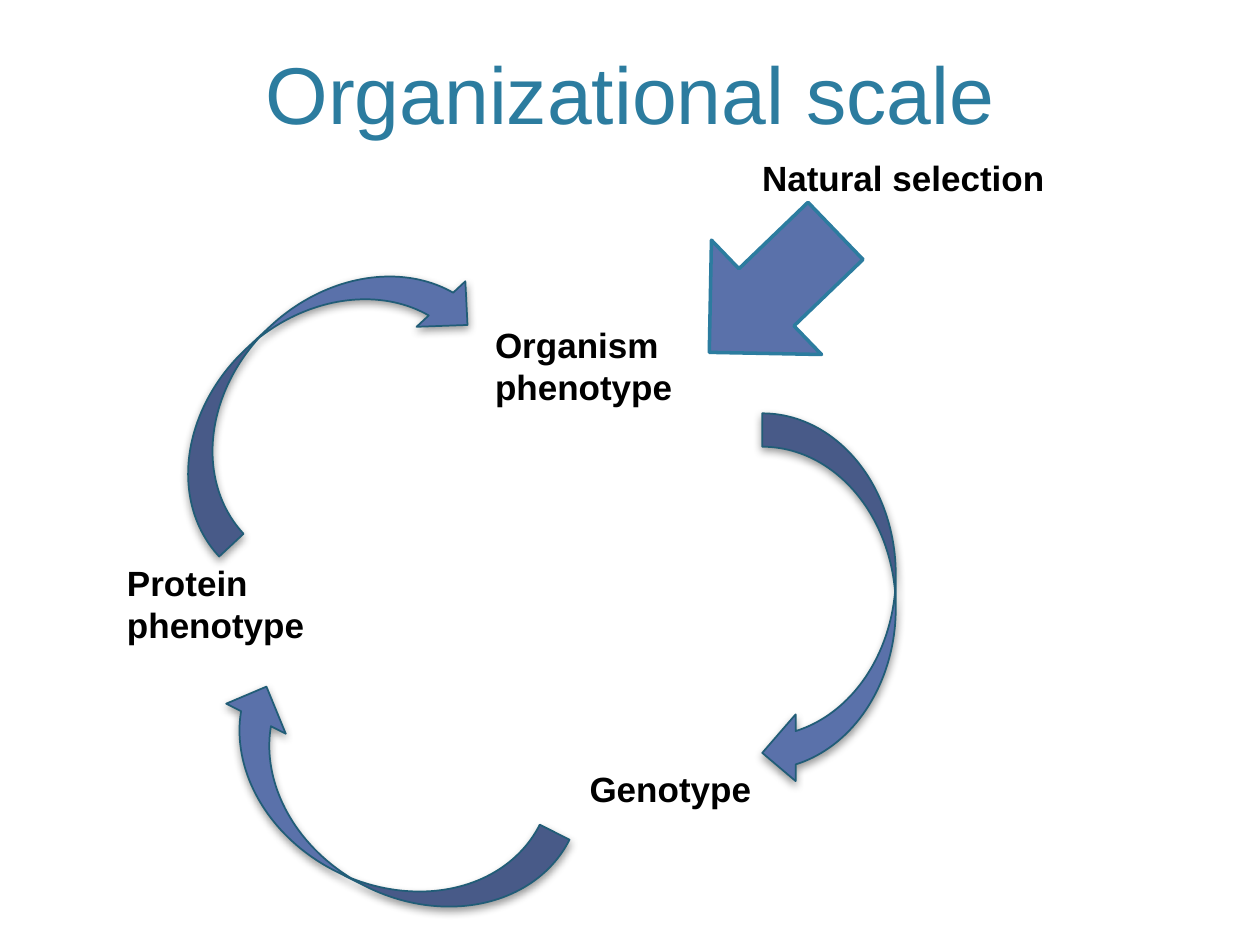
from lxml import etree
from pptx import Presentation
from pptx.dml.color import RGBColor
from pptx.enum.shapes import MSO_SHAPE as Preset
from pptx.enum.text import MSO_ANCHOR as Anchor, MSO_AUTO_SIZE as AutoSize, PP_ALIGN as Align
from pptx.oxml.ns import qn
from pptx.util import Pt


def color(hex_code):
    return RGBColor.from_string(hex_code)


class CycleSlide:
    FONT = "Arial"
    INK, ACCENT, ARROW, OUTLINE = "000000", "2C7C9F", "5A71AA", "215D77"

    def __init__(self, deck):
        self.slide = deck.slides.add_slide(deck.slide_layouts[6])

    def text(self, words, box, size, hex_code, bold=False):
        frame = self.slide.shapes.add_textbox(*map(Pt, box)).text_frame
        frame.word_wrap = True
        run = frame.paragraphs[0].add_run()
        run.text = words
        run.font.name, run.font.size, run.font.bold = self.FONT, Pt(size), bold
        run.font.color.rgb = color(hex_code)
        return frame

    def title(self, words, box):
        frame = self.text(words, box, 46, self.ACCENT)
        frame.vertical_anchor = Anchor.MIDDLE
        frame.paragraphs[0].alignment = Align.CENTER

    def label(self, words, box):
        self.text(words, box, 20, self.INK, bold=True).auto_size = AutoSize.SHAPE_TO_FIT_TEXT

    def arrow(self, preset, box, rotation, line_color, line_width):
        arrow = self.slide.shapes.add_shape(preset, *map(Pt, box))
        arrow.rotation = rotation
        arrow.fill.solid()
        arrow.fill.fore_color.rgb = color(self.ARROW)
        arrow.line.color.rgb = color(line_color)
        arrow.line.width = Pt(line_width)
        arrow.shadow.inherit = False
        return arrow

    def selection_arrow(self, box, rotation):
        self.arrow(Preset.UP_ARROW, box, rotation, self.ACCENT, 2)

    def cycle_arrow(self, left, top, rotation):
        """Add a curved arrow of the common size with a soft shadow below it."""
        arrow = self.arrow(Preset.CURVED_LEFT_ARROW, (left, top, 76.3, 213.1),
                           rotation, self.OUTLINE, 1)
        effects = arrow.element.spPr.find(qn("a:effectLst"))
        shadow = etree.SubElement(effects, qn("a:outerShdw"), blurRad=str(Pt(5)),
                                  dist=str(Pt(2)), dir="5400000", rotWithShape="0")
        tint = etree.SubElement(shadow, qn("a:srgbClr"), val=self.INK)
        etree.SubElement(tint, qn("a:alpha"), val="40000")


def main():
    deck = Presentation()
    deck.slide_width, deck.slide_height = Pt(720), Pt(540)
    cycle = CycleSlide(deck)

    cycle.label("Organism phenotype", (275.8, 181.4, 160, 55.7))
    cycle.selection_arrow((396, 116.6, 90.7, 100.1), 226.1)
    cycle.label("Natural selection", (428.4, 85.7, 180, 31.5))
    cycle.label("Genotype", (329.8, 434.9, 180, 31.5))
    cycle.label("Protein phenotype", (65.5, 317.5, 180, 55.7))
    cycle.title("Organizational scale", (113, 17.3, 493.9, 71.3))

    for left, top, rotation in ((435.6, 236.2, 0), (175, 359.3, 116.8), (139, 110.9, 227)):
        cycle.cycle_arrow(left, top, rotation)

    deck.save("out.pptx")


if __name__ == "__main__":
    main()
